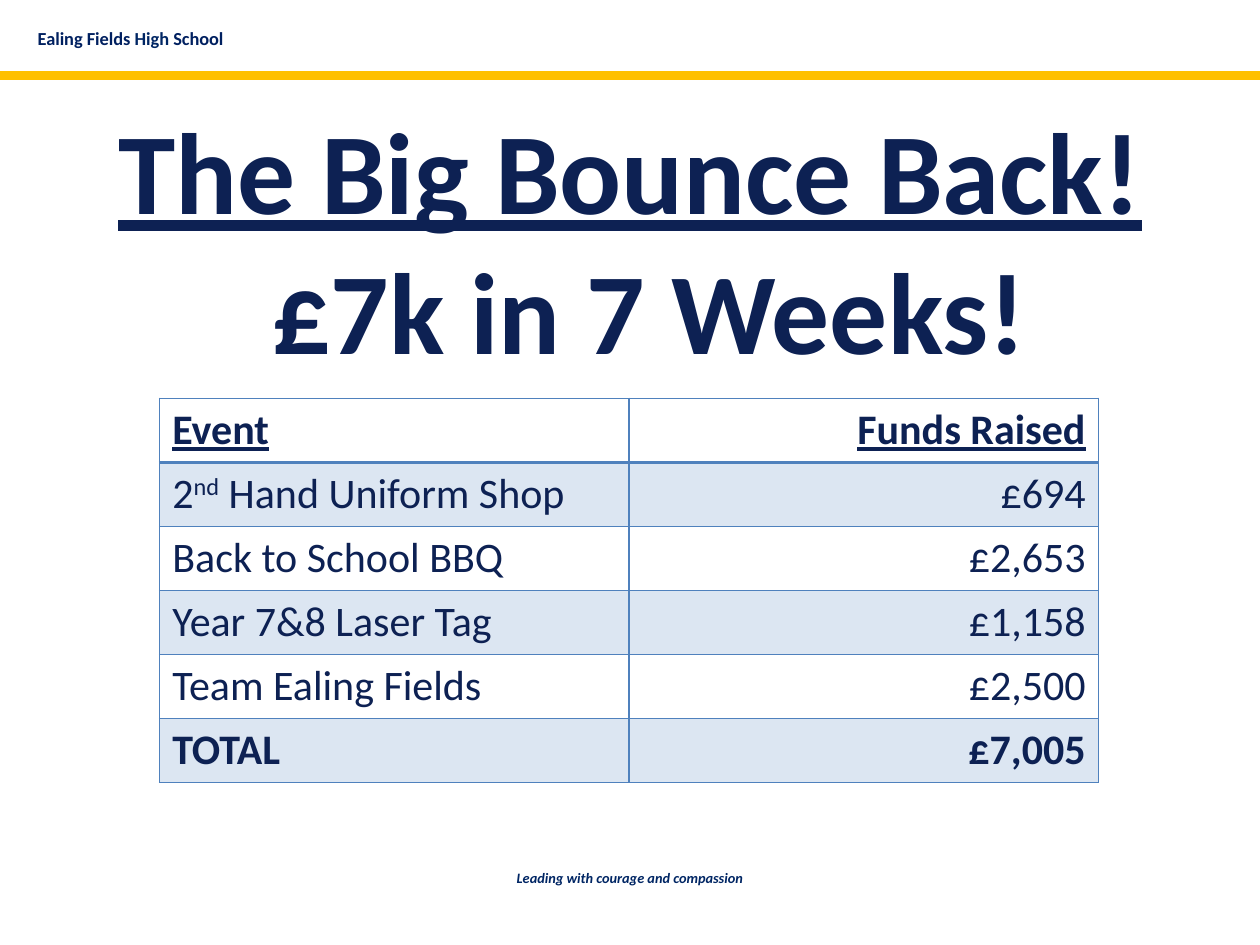
"""Build the Big Bounce Back fundraising slide."""
from lxml import etree
from pptx import Presentation
from pptx import util as u
from pptx.dml.color import RGBColor
from pptx.enum import shapes, text
from pptx.oxml.ns import qn

NAVY, DARK, DEEP = "0D2153", "002060", "002664"
GOLD, BLUE, PALE = "FFC000", "4F81BD", "DCE6F2"
LEFT, MID, RIGHT = text.PP_ALIGN.LEFT, text.PP_ALIGN.CENTER, text.PP_ALIGN.RIGHT


def tint(color, code):
    color.rgb = RGBColor.from_string(code)


def write(frame, align, size, runs, bold=True, under=False, slant=False):
    para = frame.paragraphs[0]
    para.alignment = align
    for words, code in runs:
        run = para.add_run()
        run.text = words
        font = run.font
        font.name, font.size = "Calibri", u.Pt(size)
        font.bold, font.underline, font.italic = bold, under, slant
        tint(font.color, code)
    return para


deck = Presentation()
deck.slide_width, deck.slide_height = u.Cm(25.4), u.Cm(19.05)
slide = deck.slides.add_slide(deck.slide_layouts[6])

rule = slide.shapes.add_connector(
    shapes.MSO_CONNECTOR.STRAIGHT, 0, u.Cm(1.52), deck.slide_width, u.Cm(1.52))
rule.line.width = u.Pt(5)
tint(rule.line.color, GOLD)
etree.SubElement(rule._element.spPr, qn("a:effectLst"))

school = [("Ealing Fields ", DARK), ("High", DEEP), (" School", DARK)]
motto = [("Leading with courage and compassion", DEEP)]
goal = [("£7k in 7 Weeks!", NAVY)]
title = [("The Big Bounce Back!", NAVY)]
top, mid = text.MSO_ANCHOR.TOP, text.MSO_ANCHOR.MIDDLE
boxes = [
    (0.51, 0.43, 21.41, 0.71, top, LEFT, 10.5, school, False, False),
    (10.11, 17.4, 5.18, 0.61, top, MID, 8.2, motto, False, True),
    (0.79, 4.7, 24.61, 2.57, top, MID, 66, goal, False, False),
    (1.27, 1.8, 22.86, 3.18, mid, MID, 66, title, True, False),
]
for x, y, w, h, anchor, align, size, runs, under, slant in boxes:
    frame = slide.shapes.add_textbox(u.Cm(x), u.Cm(y), u.Cm(w), u.Cm(h)).text_frame
    frame.word_wrap = runs is not motto
    frame.vertical_anchor = anchor
    write(frame, align, size, runs, under=under, slant=slant)

rows = [
    (["Event"], "Funds Raised"),
    (["2", "nd", " Hand Uniform Shop"], "£694"),
    (["Back to School BBQ"], "£2,653"),
    (["Year 7&8 Laser Tag"], "£1,158"),
    (["Team Ealing Fields"], "£2,500"),
    (["TOTAL"], "£7,005"),
]
table = slide.shapes.add_table(
    len(rows), 2, u.Cm(3.22), u.Cm(8.03), u.Cm(18.92), u.Cm(7.74)).table
table.first_row = table.horz_banding = False
for i, (event, funds) in enumerate(rows):
    head = i == 0
    for j, (parts, align) in enumerate([(event, LEFT), ([funds], RIGHT)]):
        cell = table.cell(i, j)
        para = write(cell.text_frame, align, 24, [(part, NAVY) for part in parts],
                     bold=head or i == len(rows) - 1, under=head)
        for run in para.runs:
            if run.text == "nd":
                run._r.get_or_add_rPr().set("baseline", "30000")
        props = cell._tc.get_or_add_tcPr()
        for side in "LRTB":
            thick = (i, side) in [(0, "B"), (1, "T")]
            edge = etree.SubElement(
                props, qn(f"a:ln{side}"), w=str(u.Pt(2 if thick else 1)))
            fill = etree.SubElement(edge, qn("a:solidFill"))
            etree.SubElement(fill, qn("a:srgbClr"), val=BLUE)
        if i % 2:
            cell.fill.solid()
            tint(cell.fill.fore_color, PALE)
        else:
            cell.fill.background()

deck.save("out.pptx")
